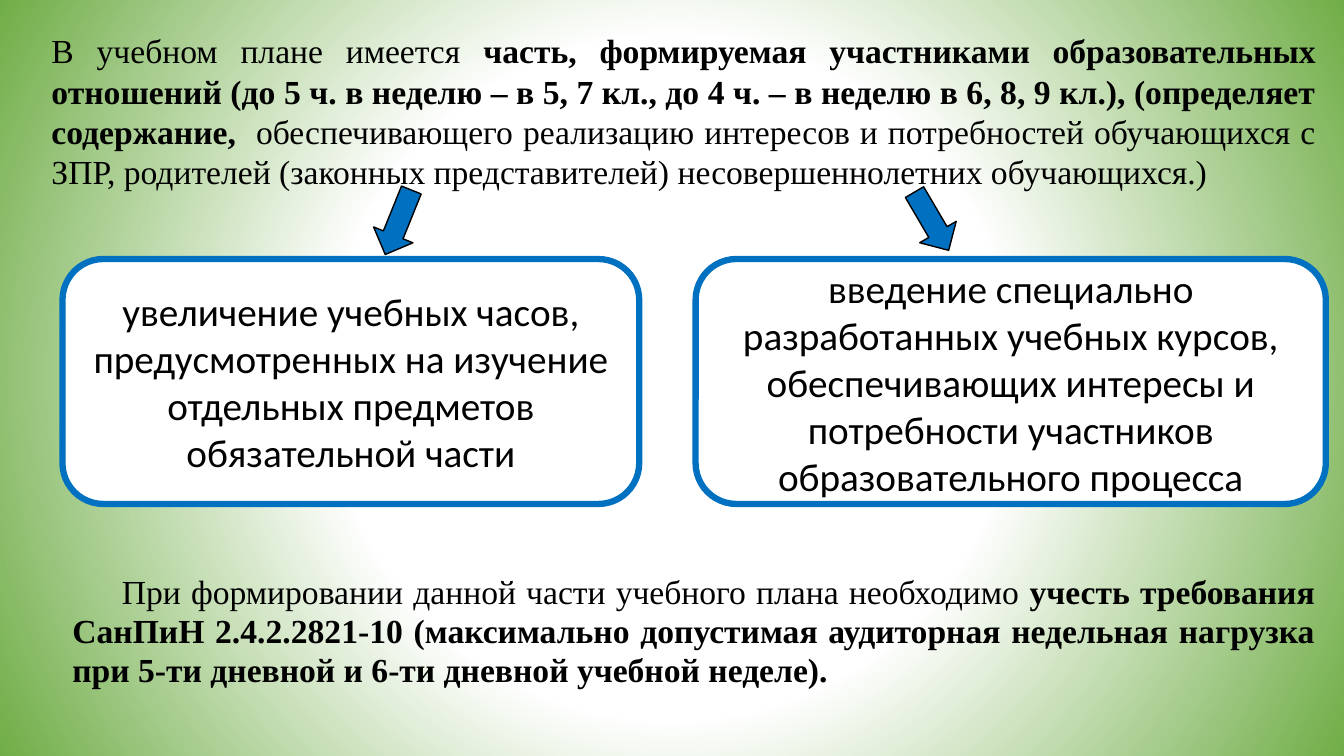
"""Build the slide on the part of the curriculum formed by participants of education."""
import dataclasses
import typing

import lxml.etree
import pptx
import pptx.dml.color
import pptx.enum.shapes
import pptx.enum.text
import pptx.oxml
import pptx.oxml.ns
import pptx.util

COLOURS = {"paper": "FFFFFF", "edge": "70AD47", "accent": "0070C0", "ink": "000000"}
SERIF, SANS = "Times New Roman", "Calibri"
ALIGN = pptx.enum.text.PP_ALIGN
ANCHOR = pptx.enum.text.MSO_ANCHOR
PRESET = pptx.enum.shapes.MSO_SHAPE


@dataclasses.dataclass(frozen=True)
class Area:
    """Place on the slide in percent of its width and height."""
    left: float
    top: float
    width: float
    height: float


@dataclasses.dataclass(frozen=True)
class Phrase:
    text: str
    bold: bool = False


@dataclasses.dataclass(frozen=True)
class Option:
    """One use of the hours, with the arrow that leads to it."""
    text: str
    card: Area
    arrow: Area
    turn: float


INTRO_AREA = Area(3.08, 3.33, 95.57, 22.93)
INTRO = (
    Phrase("В учебном плане имеется"),
    Phrase(" часть, формируемая участниками образовательных отношений "
           "(до 5 ч. в неделю – в 5, 7 кл., до 4 ч. – в неделю в 6, 8, 9 кл.), "
           "(определяет содержание,  ", True),
    Phrase("обеспечивающего реализацию интересов и потребностей обучающихся с ЗПР, "
           "родителей (законных представителей) несовершеннолетних обучающихся.)"),
)
OPTIONS = (
    Option("увеличение учебных часов, предусмотренных на изучение "
           "отдельных предметов обязательной части",
           Area(4.65, 34.27, 42.91, 32.4), Area(28.06, 24.8, 3.15, 9.2), 22),
    Option("введение специально разработанных учебных курсов, обеспечивающих "
           "интересы и потребности участников образовательного процесса",
           Area(51.76, 34.27, 46.89, 32.4), Area(67.74, 24.8, 3.15, 8.93), 329.6),
)
RULE_AREA = Area(4.65, 75.2, 93.92, 22.27)
RULE = (
    Phrase("При формировании данной части учебного плана необходимо "),
    Phrase("учесть требования СанПиН 2.4.2.2821-10 (максимально допустимая "
           "аудиторная недельная нагрузка при 5-ти дневной и 6-ти дневной "
           "учебной неделе).", True),
)

deck = pptx.Presentation()
deck.slide_width = pptx.util.Inches(13.33)
deck.slide_height = pptx.util.Inches(7.5)


def place(area: Area) -> tuple[int, int, int, int]:
    across, down = deck.slide_width / 100, deck.slide_height / 100
    return (round(area.left * across), round(area.top * down),
            round(area.width * across), round(area.height * down))


def colour(name: str) -> pptx.dml.color.RGBColor:
    return pptx.dml.color.RGBColor.from_string(COLOURS[name])


def write(frame: typing.Any, phrases: typing.Iterable[Phrase], face: str, size: float,
          align: typing.Any, anchor: typing.Any) -> typing.Any:
    frame.word_wrap = True
    frame.auto_size = pptx.enum.text.MSO_AUTO_SIZE.NONE
    frame.vertical_anchor = anchor
    paragraph = frame.paragraphs[0]
    paragraph.alignment = align
    for phrase in phrases:
        run = paragraph.add_run()
        run.text = phrase.text
        run.font.name, run.font.size = face, pptx.util.Pt(size)
        run.font.bold = phrase.bold
        run.font.color.rgb = colour("ink")
    return paragraph


def draw(slide: typing.Any, preset: typing.Any, area: Area, fill: str, line: str,
         weight: float) -> typing.Any:
    shape = slide.shapes.add_shape(preset, *place(area))
    shape.shadow.inherit = False
    shape.fill.solid()
    shape.fill.fore_color.rgb = colour(fill)
    shape.line.color.rgb = colour(line)
    shape.line.width = pptx.util.Pt(weight)
    return shape


def paint_background(slide: typing.Any) -> None:
    fill = slide.background.fill
    fill.gradient()
    gradient = slide.background._cSld.bg.bgPr.find(pptx.oxml.ns.qn("a:gradFill"))
    radial = pptx.oxml.parse_xml(
        f'<a:gradFill {pptx.oxml.ns.nsdecls("a")} rotWithShape="1"><a:gsLst>'
        f'<a:gs pos="0"><a:srgbClr val="{COLOURS["paper"]}"/></a:gs>'
        f'<a:gs pos="44000"><a:srgbClr val="{COLOURS["paper"]}">'
        '<a:alpha val="44000"/></a:srgbClr></a:gs>'
        f'<a:gs pos="100000"><a:srgbClr val="{COLOURS["edge"]}"/></a:gs></a:gsLst>'
        '<a:path path="circle"><a:fillToRect l="50000" t="50000" r="50000" b="50000"/>'
        '</a:path></a:gradFill>')
    gradient.getparent().replace(gradient, radial)


def main() -> None:
    slide = deck.slides.add_slide(deck.slide_layouts.get_by_name("Title Only"))
    paint_background(slide)

    intro = slide.shapes.title
    intro.left, intro.top, intro.width, intro.height = place(INTRO_AREA)
    write(intro.text_frame, INTRO, SERIF, 24, ALIGN.JUSTIFY, ANCHOR.TOP)

    for option in OPTIONS:
        card = draw(slide, PRESET.ROUNDED_RECTANGLE, option.card, "paper", "accent", 4.5)
        write(card.text_frame, [Phrase(option.text)], SANS, 28, ALIGN.CENTER, ANCHOR.MIDDLE)
    for option in OPTIONS:
        arrow = draw(slide, PRESET.DOWN_ARROW, option.arrow, "accent", "ink", 1)
        arrow.rotation = option.turn

    rule = slide.shapes.add_textbox(*place(RULE_AREA))
    paragraph = write(rule.text_frame, RULE, SERIF, 24, ALIGN.JUSTIFY, ANCHOR.TOP)
    paragraph.line_spacing = 0.97
    paragraph._p.get_or_add_pPr().set("indent", str(pptx.util.Inches(0.49)))

    deck.save("out.pptx")


if __name__ == "__main__":
    main()
